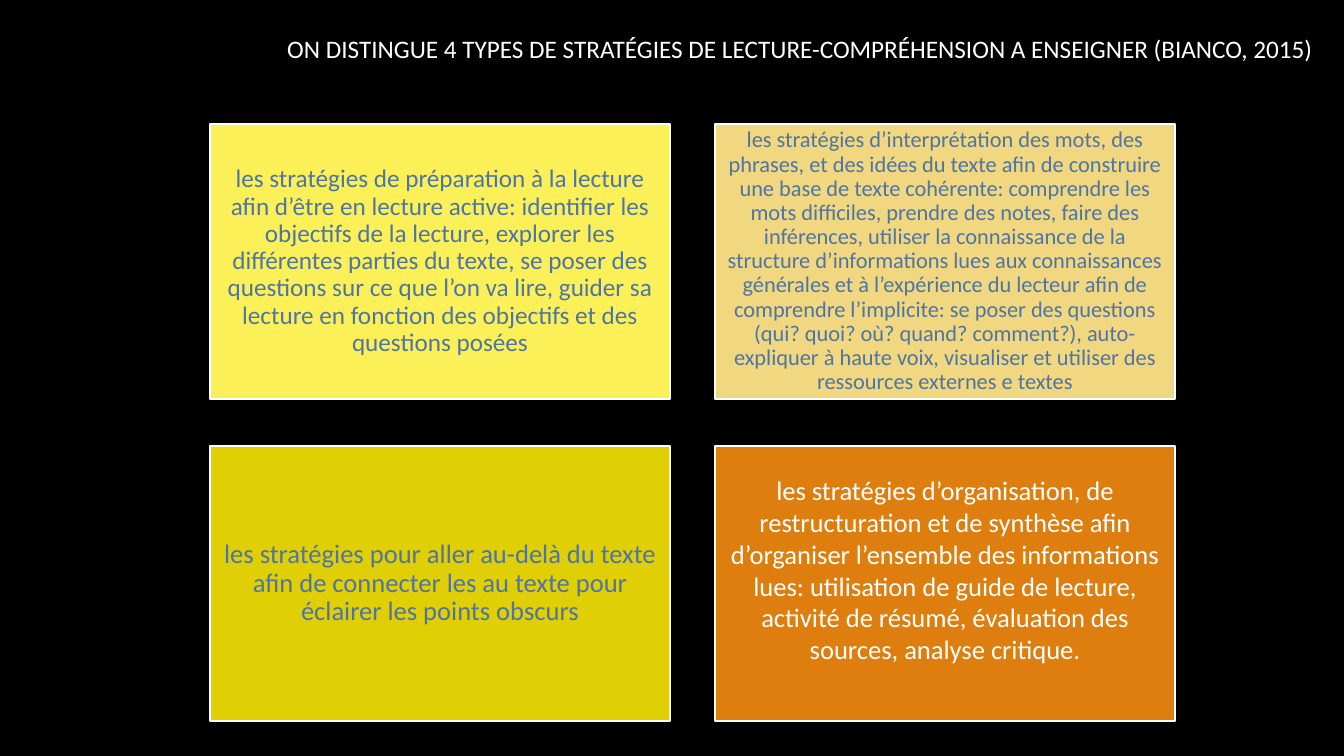
import pptx
import pptx.util
import pptx.dml.color
import pptx.enum.shapes
import pptx.enum.text
from dataclasses import dataclass

EMU_PER_PX = 914400 / 100.8


@dataclass(frozen=True)
class Theme:
    font: str = "Calibri"
    background: str = "000000"
    white: str = "FFFFFF"
    blue: str = "4E75A3"
    lemon: str = "FCF059"
    sand: str = "F1D77F"
    mustard: str = "DFCF04"
    orange: str = "DD7E0E"
    small: int = 16
    medium: int = 18
    large: int = 19


theme = Theme()


def px(length):
    return pptx.util.Emu(round(length * EMU_PER_PX))


def style_paragraph(para, size, color, alignment):
    para.alignment = alignment
    for span in para.runs:
        span.font.name = theme.font
        span.font.size = pptx.util.Pt(size)
        span.font.color.rgb = pptx.dml.color.RGBColor.from_string(color)


# Page
deck = pptx.Presentation()
deck.slide_width, deck.slide_height = px(1344), px(756)
page = deck.slides.add_slide(deck.slide_layouts[6])
page.background.fill.solid()
page.background.fill.fore_color.rgb = pptx.dml.color.RGBColor.from_string(theme.background)

# Heading
heading = page.shapes.add_textbox(px(44), px(28), px(1279), px(395))
heading.text_frame.word_wrap = True
heading.text_frame.text = (
    "ON DISTINGUE 4 TYPES DE STRATÉGIES DE LECTURE-COMPRÉHENSION A ENSEIGNER (BIANCO, 2015)"
)
style_paragraph(heading.text_frame.paragraphs[0], theme.medium, theme.white,
                pptx.enum.text.PP_ALIGN.RIGHT)

# Strategies: text, fill, text colour, size, line spacing, inset, extra bottom inset
strategies = [
    ("les stratégies de préparation à la lecture afin d’être en lecture active: identifier les "
     "objectifs de la lecture, explorer les différentes parties du texte, se poser des questions "
     "sur ce que l’on va lire, guider sa lecture en fonction des objectifs et des questions posées",
     theme.lemon, theme.blue, theme.medium, 0.9, 7, 0),
    ("les stratégies d’interprétation des mots, des phrases, et des idées du texte afin de "
     "construire une base de texte cohérente: comprendre les mots difficiles, prendre des notes, "
     "faire des inférences, utiliser la connaissance de la structure d’informations lues aux "
     "connaissances générales et à l’expérience du lecteur afin de comprendre l’implicite: se "
     "poser des questions (qui? quoi? où? quand? comment?), auto-expliquer à haute voix, "
     "visualiser et utiliser des ressources externes e textes",
     theme.sand, theme.blue, theme.small, 0.9, 7, 0),
    ("les stratégies pour aller au-delà du texte afin de connecter les au texte pour éclairer "
     "les points obscurs",
     theme.mustard, theme.blue, theme.large, 0.9, 8, 0),
    ("les stratégies d’organisation, de restructuration et de synthèse afin d’organiser "
     "l’ensemble des informations lues: utilisation de guide de lecture, activité de résumé, "
     "évaluation des sources, analyse critique.",
     theme.orange, theme.white, theme.large, 1.0, 8, 28),
]

# Two-by-two grid of boxes
for index, (text, fill, color, size, spacing, inset, extra) in enumerate(strategies):
    row, column = divmod(index, 2)
    box = page.shapes.add_shape(pptx.enum.shapes.MSO_SHAPE.RECTANGLE,
                                px(210 + 505 * column), px(124 + 322 * row),
                                px(460), px(275))
    box.shadow.inherit = False
    box.fill.solid()
    box.fill.fore_color.rgb = pptx.dml.color.RGBColor.from_string(fill)
    box.line.color.rgb = pptx.dml.color.RGBColor.from_string(theme.white)
    box.line.width = pptx.util.Pt(1.5)

    frame = box.text_frame
    frame.word_wrap = True
    frame.vertical_anchor = pptx.enum.text.MSO_ANCHOR.MIDDLE
    frame.margin_left = frame.margin_right = frame.margin_top = px(inset)
    frame.margin_bottom = px(inset + extra)
    frame.text = text
    frame.paragraphs[0].line_spacing = spacing
    style_paragraph(frame.paragraphs[0], size, color, pptx.enum.text.PP_ALIGN.CENTER)

deck.save("out.pptx")
